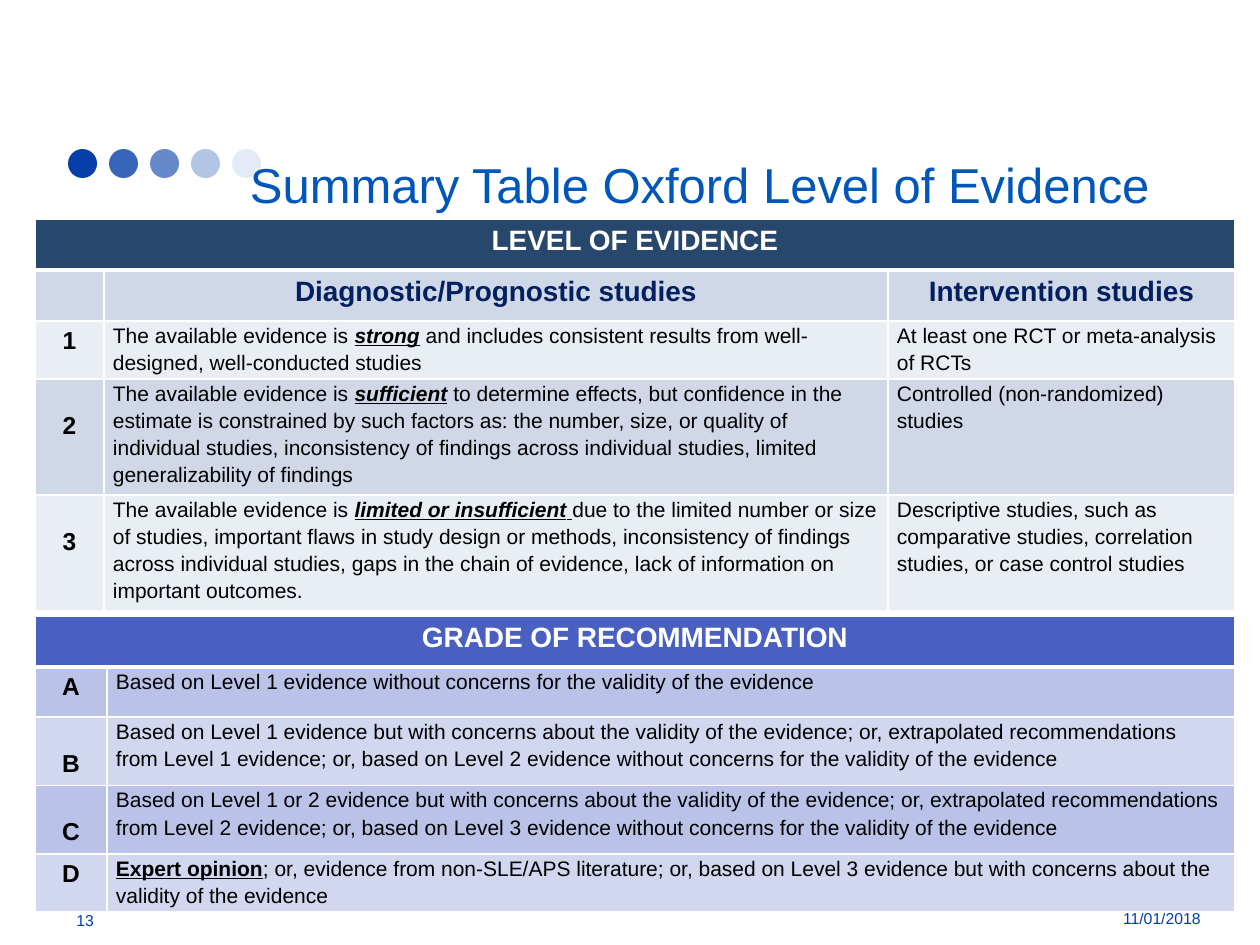
from lxml import etree
from pptx import Presentation
from pptx import util as u
from pptx.dml.color import RGBColor
from pptx.enum import shapes, text
from pptx.oxml import ns

SCALE = 914400 / 126  # EMU in one px

WHITE = RGBColor(0xFF, 0xFF, 0xFF)
BLACK = RGBColor(0x00, 0x00, 0x00)
DOT_BLUE = RGBColor(0x06, 0x3F, 0xA9)
TITLE_BLUE = RGBColor(0x00, 0x56, 0xB9)
FOOTER_BLUE = RGBColor(0x00, 0x3F, 0xA8)
NAVY = RGBColor(0x00, 0x20, 0x60)
LEVEL_HEADER = RGBColor(0x28, 0x47, 0x6D)
LEVEL_BANDS = RGBColor(0xD0, 0xD8, 0xE8), RGBColor(0xE9, 0xED, 0xF4)
GRADE_HEADER = RGBColor(0x4A, 0x60, 0xC1)
GRADE_BANDS = RGBColor(0xBA, 0xC2, 0xE8), RGBColor(0xD1, 0xD7, 0xEF)

HEADING = {"size": u.Pt(16), "bold": True}
LABEL = {"size": u.Pt(14), "bold": True}
BODY = {"size": u.Pt(12), "bold": False}
STRONG = {"bold": True, "italic": True, "underline": True}
UNDERLINED = {"underline": True}
BOLD_UNDERLINED = {"bold": True, "underline": True}
CENTER, LEFT, RIGHT = text.PP_ALIGN.CENTER, text.PP_ALIGN.LEFT, text.PP_ALIGN.RIGHT

LEVEL_ROWS = [
    ("1",
     [("The available evidence is ", {}), ("strong", STRONG),
      (" and includes consistent results from well-designed, "
       "well-conducted studies", {})],
     [("At least one RCT or meta-analysis of RCTs", {})]),
    ("2",
     [("The available evidence is ", {}), ("sufficient", STRONG),
      (" to determine effects, but confidence in the estimate is constrained by "
       "such factors as: the number, size, or quality of individual studies, "
       "inconsistency of findings across individual studies, limited "
       "generalizability of findings", {})],
     [("Controlled (non-randomized) studies", {})]),
    ("3",
     [("The available evidence is ", {}), ("limited or", STRONG),
      (" ", BOLD_UNDERLINED), ("insufficient", STRONG), (" ", UNDERLINED),
      ("due to the limited number or size of studies, important flaws in study "
       "design or methods, inconsistency of findings across individual studies, "
       "gaps in the chain of evidence, lack of information on important "
       "outcomes.", {})],
     [("Descriptive studies, such as comparative studies, correlation studies, "
       "or case control studies", {})]),
]
GRADE_ROWS = [
    ("A", [("Based on Level 1 evidence without concerns for the validity of the "
            "evidence", {})]),
    ("B", [("Based on Level 1 evidence but with concerns about the validity of the "
            "evidence; or, extrapolated recommendations from Level 1 evidence; or, "
            "based on Level 2 evidence without concerns for the validity of the "
            "evidence", {})]),
    ("C", [("Based on Level 1 or 2 evidence but with concerns about the validity of "
            "the evidence; or, extrapolated recommendations from Level 2 evidence; "
            "or, based on Level 3 evidence without concerns for the validity of the "
            "evidence", {})]),
    ("D", [("Expert opinion", BOLD_UNDERLINED),
           ("; or, evidence from non-SLE/APS literature; or, based on Level 3 "
            "evidence but with concerns about the validity of the evidence", {})]),
]


def px(value):
    return u.Emu(round(value * SCALE))


def set_all(target, values):
    for name, value in values.items():
        setattr(target, name, value)


def set_margins(target, left, top, right, bottom):
    set_all(target, {"margin_left": px(left), "margin_top": px(top),
                     "margin_right": px(right), "margin_bottom": px(bottom)})


def write(paragraph, runs, style, color, align=LEFT):
    paragraph.alignment = align
    for words, emphasis in runs:
        run = paragraph.add_run()
        run.text = words
        set_all(run.font, {"name": "Arial", **style, **emphasis})
        run.font.color.rgb = color


def add_dots(slide, left, top, size=29, pitch=41):
    """Row of circles that fade to the right."""
    group = slide.shapes.add_group_shape()
    for index, opacity in enumerate((100, 80, 61, 30, 10)):
        dot = group.shapes.add_shape(shapes.MSO_SHAPE.OVAL, px(left + index * pitch),
                                     px(top), px(size), px(size))
        dot.shadow.inherit = False
        dot.line.fill.background()
        dot.fill.solid()
        dot.fill.fore_color.rgb = DOT_BLUE
        if opacity < 100:
            color = dot._element.spPr.find(".//" + ns.qn("a:srgbClr"))
            etree.SubElement(color, ns.qn("a:alpha")).set("val", str(opacity * 1000))


def place_title(slide, left, top, width, height):
    title = slide.shapes.title
    set_all(title, {"left": px(left), "top": px(top),
                    "width": px(width), "height": px(height)})
    frame = title.text_frame
    set_all(frame, {"word_wrap": True, "auto_size": text.MSO_AUTO_SIZE.NONE,
                    "vertical_anchor": text.MSO_ANCHOR.TOP})
    set_margins(frame, 216, 5, 12, 6)
    write(frame.paragraphs[0], [("Summary Table Oxford Level of Evidence", {})],
          {"size": u.Pt(28)}, TITLE_BLUE)
    slide.shapes._spTree.append(title._element)  # in front of the dots


def add_footer(slide, words, left, top, width, height, align):
    frame = slide.shapes.add_textbox(px(left), px(top), px(width), px(height)).text_frame
    set_all(frame, {"word_wrap": True, "vertical_anchor": text.MSO_ANCHOR.MIDDLE})
    write(frame.paragraphs[0], [(words, {})], {"size": u.Pt(9)}, FOOTER_BLUE, align)


def format_cell(cell, fill, top=1, bottom=1):
    """White borders, then the fill."""
    properties = cell._tc.get_or_add_tcPr()
    for side, width in (("L", 1), ("R", 1), ("T", top), ("B", bottom)):
        line = etree.SubElement(properties, ns.qn("a:ln" + side), w=str(u.Pt(width)))
        solid = etree.SubElement(line, ns.qn("a:solidFill"))
        etree.SubElement(solid, ns.qn("a:srgbClr"), val=str(WHITE))
    cell.fill.solid()
    cell.fill.fore_color.rgb = fill


def fill_centered(cell, words, style, color, top=6):
    set_margins(cell, 13, top, 13, 6)
    write(cell.text_frame.paragraphs[0], [(words, {})], style, color, CENTER)


def fill_body(cell, runs, insets):
    left, right = insets
    set_margins(cell, left, 0, right, 0)
    paragraph = cell.text_frame.paragraphs[0]
    paragraph.line_spacing = 1.15
    write(paragraph, runs, BODY, BLACK)


def add_evidence_table(slide, left, top, columns, heights, heading, header_fill,
                       bands, rows, insets, lowered, subheads=()):
    """Merged heading, optional subheads, then labelled rows."""
    table = slide.shapes.add_table(len(heights), len(columns), px(left), px(top),
                                   px(sum(columns)), px(sum(heights))).table
    set_all(table, {"first_row": False, "horz_banding": False})
    for column, width in zip(table.columns, columns):
        column.width = px(width)
    for index, (row, height) in enumerate(zip(table.rows, heights)):
        row.height = px(height)
        for cell in row.cells:
            format_cell(cell, bands[(index - 1) % 2] if index else header_fill,
                        top=3 if index == 1 else 1, bottom=1 if index else 3)

    table.cell(0, 0).merge(table.cell(0, len(columns) - 1))
    fill_centered(table.cell(0, 0), heading, HEADING, WHITE)
    for column, words in enumerate(subheads, 1):
        fill_centered(table.cell(1, column), words, HEADING, NAVY)
    for index, (label, *bodies) in enumerate(rows, len(heights) - len(rows)):
        fill_centered(table.cell(index, 0), label, LABEL, BLACK,
                      top=33 if label in lowered else 6)
        for column, runs in enumerate(bodies, 1):
            fill_body(table.cell(index, column), runs, insets)


def main():
    presentation = Presentation()
    set_all(presentation, {"slide_width": px(1260), "slide_height": px(945)})
    slide = presentation.slides.add_slide(presentation.slide_layouts[5])

    # Heading
    add_dots(slide, 68, 149)
    place_title(slide, 34, 149, 1148, 87)

    # Page number and date
    add_footer(slide, "13", 64, 895, 121, 50, LEFT)
    add_footer(slide, "11/01/2018", 1044, 893, 169, 50, RIGHT)

    # Tables
    add_evidence_table(slide, 35, 219, (69, 784, 347), (51, 51, 58, 108, 108),
                       "LEVEL OF EVIDENCE", LEVEL_HEADER, LEVEL_BANDS, LEVEL_ROWS,
                       (9, 8), "23",
                       ("Diagnostic/Prognostic studies", "Intervention studies"))
    add_evidence_table(slide, 35, 616, (72, 1128), (51, 50, 68, 68, 57),
                       "GRADE OF RECOMMENDATION", GRADE_HEADER, GRADE_BANDS, GRADE_ROWS,
                       (9, 14), "BC")
    presentation.save("out.pptx")


if __name__ == "__main__":
    main()
